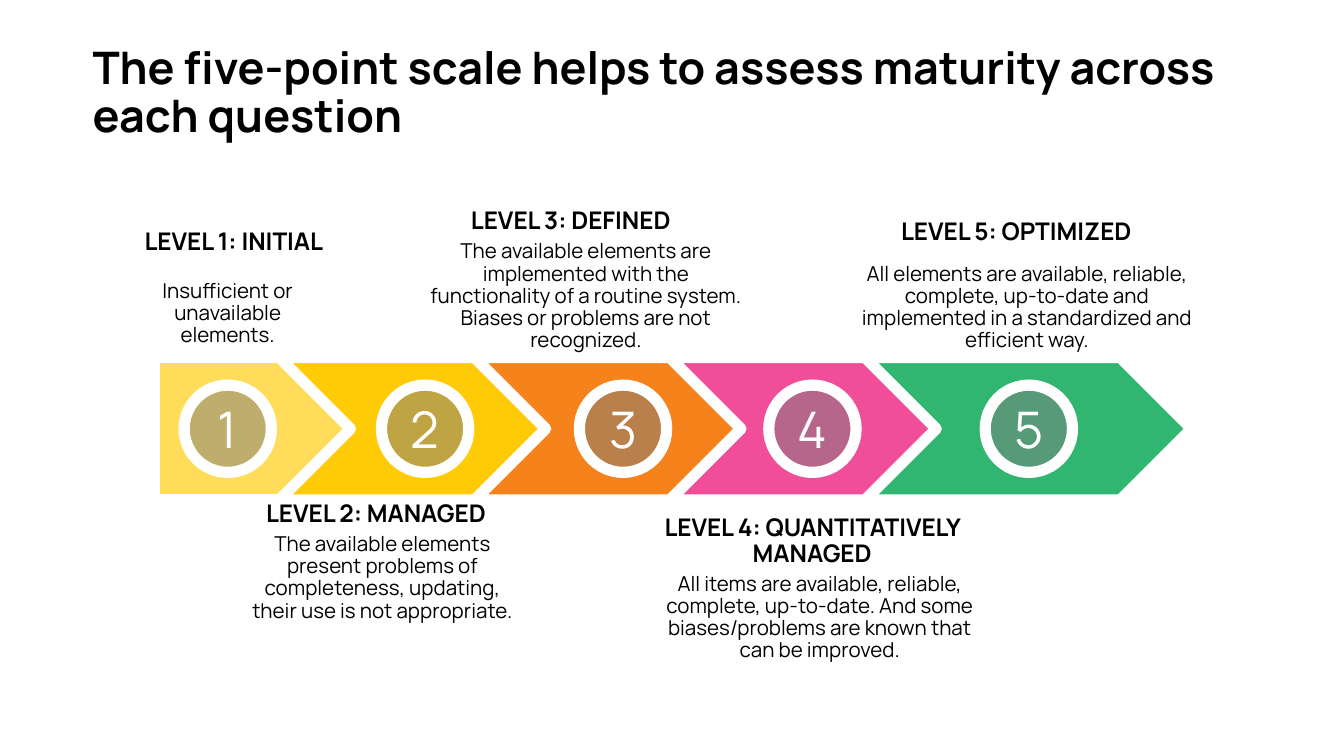
"""Build a slide that explains the five levels of a maturity scale."""

from dataclasses import dataclass
from typing import NamedTuple

from lxml.etree import SubElement
from pptx import Presentation
from pptx.dml.color import RGBColor
from pptx.enum.shapes import MSO_SHAPE as Preset
from pptx.enum.text import MSO_ANCHOR as Anchor, MSO_AUTO_SIZE as AutoSize, PP_ALIGN as Align
from pptx.oxml.ns import qn
from pptx.util import Cm, Pt

FONT = "Manrope"
COLORS = {
    "text": "000000",
    "white": "FFFFFF",
    "badge": "7F7F7F",
    "level 1": "FFCB03",
    "level 2": "FFCB07",
    "level 3": "F5821A",
    "level 4": "F04E98",
    "level 5": "30B671",
}

BAND_TOP, BAND_HEIGHT = 6.76, 2.69
CHEVRON_LEFT, CHEVRON_STEP = 5.28, 3.69
CHEVRON_WIDTH, LAST_WIDTH = 7.39, 6.17
BADGE_SIZE = 1.65


class Box(NamedTuple):
    """Left, top, width and height in centimetres."""

    left: float
    top: float
    width: float
    height: float


@dataclass(frozen=True)
class Level:
    """One step of the scale with its two texts and its badge."""

    name: str
    heading_box: Box
    description: str
    description_box: Box
    badge_left: float


LEVELS = [
    Level("INITIAL", Box(2.11, 3.94, 4.62, 1.14),
          "Insufficient or unavailable elements.",
          Box(2.49, 5.18, 3.63, 1.52), 3.48),
    Level("MANAGED", Box(4.5, 9.24, 5.21, 1.14),
          "The available elements present problems of completeness, updating, "
          "their use is not appropriate.",
          Box(4.45, 9.96, 5.56, 2.36), 7.21),
    Level("DEFINED", Box(8.31, 3.7, 4.95, 0.99),
          "The available elements are implemented with the functionality of a "
          "routine system. Biases or problems are not recognized.",
          Box(7.8, 4.43, 6.55, 2.36), 10.95),
    Level("QUANTITATIVELY MANAGED", Box(11.35, 9.49, 8, 1.3),
          "All items are available, reliable, complete, up-to-date. And some "
          "biases/problems are known that can be improved.",
          Box(12.17, 10.71, 6.65, 1.96), 14.53),
    Level("OPTIMIZED", Box(16.6, 3.91, 5.21, 0.99),
          "All elements are available, reliable, complete, up-to-date and "
          "implemented in a standardized and efficient way.",
          Box(15.79, 4.85, 7.24, 1.96), 18.62),
]


def rgb(name: str) -> RGBColor:
    """Look up a colour by name."""
    return RGBColor.from_string(COLORS[name])


def write(shape, text: str, size: float, color: str = "text", bold: bool = False,
          align=Align.CENTER, anchor=Anchor.TOP, spacing: float = 0.9,
          insets: tuple[float, float] = (0.25, 0.25), wrap: bool = True) -> None:
    """Put one formatted paragraph into a shape."""
    frame = shape.text_frame
    frame.text = text
    frame.word_wrap = wrap
    frame.vertical_anchor = anchor
    frame.margin_left = frame.margin_right = Cm(insets[0])
    frame.margin_top = frame.margin_bottom = Cm(insets[1])
    paragraph = frame.paragraphs[0]
    paragraph.alignment = align
    paragraph.line_spacing = spacing
    font = paragraph.runs[0].font
    font.name, font.size, font.bold = FONT, Pt(size), bold
    font.color.rgb = rgb(color)


def add_text(slide, box: Box, text: str, size: float, **style):
    """Add a text box and return it."""
    shape = slide.shapes.add_textbox(*map(Cm, box))
    write(shape, text, size, **style)
    return shape


def add_outlined(slide, preset, box: Box, color: str, opacity: int = 100):
    """Add a filled shape with a thick white outline."""
    shape = slide.shapes.add_shape(preset, *map(Cm, box))
    shape.shadow.inherit = False
    shape.fill.solid()
    shape.fill.fore_color.rgb = rgb(color)
    if opacity < 100:
        fill_color = shape.element.spPr.find(qn("a:solidFill"))[0]
        SubElement(fill_color, qn("a:alpha"), val=str(opacity * 1000))
    shape.line.color.rgb = rgb("white")
    shape.line.width = Pt(6)
    return shape


def add_level_texts(slide, number: int, level: Level) -> None:
    """Add the heading and the description of a level."""
    above = level.heading_box.top < BAND_TOP
    add_text(slide, level.heading_box, f"LEVEL {number}: {level.name}", 13, bold=True,
             anchor=Anchor.BOTTOM if above else Anchor.TOP)
    description = add_text(slide, level.description_box, level.description, 11,
                           insets=(0.25, 0.13))
    description.text_frame.auto_size = AutoSize.SHAPE_TO_FIT_TEXT


def add_band(slide) -> None:
    """Add the opening rectangle and the chevrons that follow it."""
    add_outlined(slide, Preset.RECTANGLE, Box(2.92, BAND_TOP, 7.24, BAND_HEIGHT),
                 "level 1", opacity=65)
    for number in range(2, len(LEVELS) + 1):
        left = CHEVRON_LEFT + (number - 2) * CHEVRON_STEP
        width = LAST_WIDTH if number == len(LEVELS) else CHEVRON_WIDTH
        add_outlined(slide, Preset.CHEVRON, Box(left, BAND_TOP, width, BAND_HEIGHT),
                     f"level {number}")


def add_badge(slide, number: int, left: float) -> None:
    """Add a numbered circle centred on the height of the band."""
    top = BAND_TOP + (BAND_HEIGHT - BADGE_SIZE) / 2
    badge = add_outlined(slide, Preset.OVAL, Box(left, top, BADGE_SIZE, BADGE_SIZE),
                         "badge", opacity=50)
    write(badge, str(number), 27, color="white", anchor=Anchor.MIDDLE, spacing=1.0,
          wrap=False)


def main() -> None:
    """Build and save the presentation."""
    presentation = Presentation()
    presentation.slide_width, presentation.slide_height = Cm(25.4), Cm(14.29)
    slide = presentation.slides.add_slide(presentation.slide_layouts[6])

    add_band(slide)
    for number, level in enumerate(LEVELS, start=1):
        add_level_texts(slide, number, level)
        add_badge(slide, number, level.badge_left)
    add_text(slide, Box(1.57, 0.71, 21.87, 2.13),
             "The five-point scale helps to assess maturity across each question", 24,
             bold=True, align=Align.LEFT, anchor=Anchor.MIDDLE, insets=(0.18, 0.1))

    presentation.save("out.pptx")


if __name__ == "__main__":
    main()
